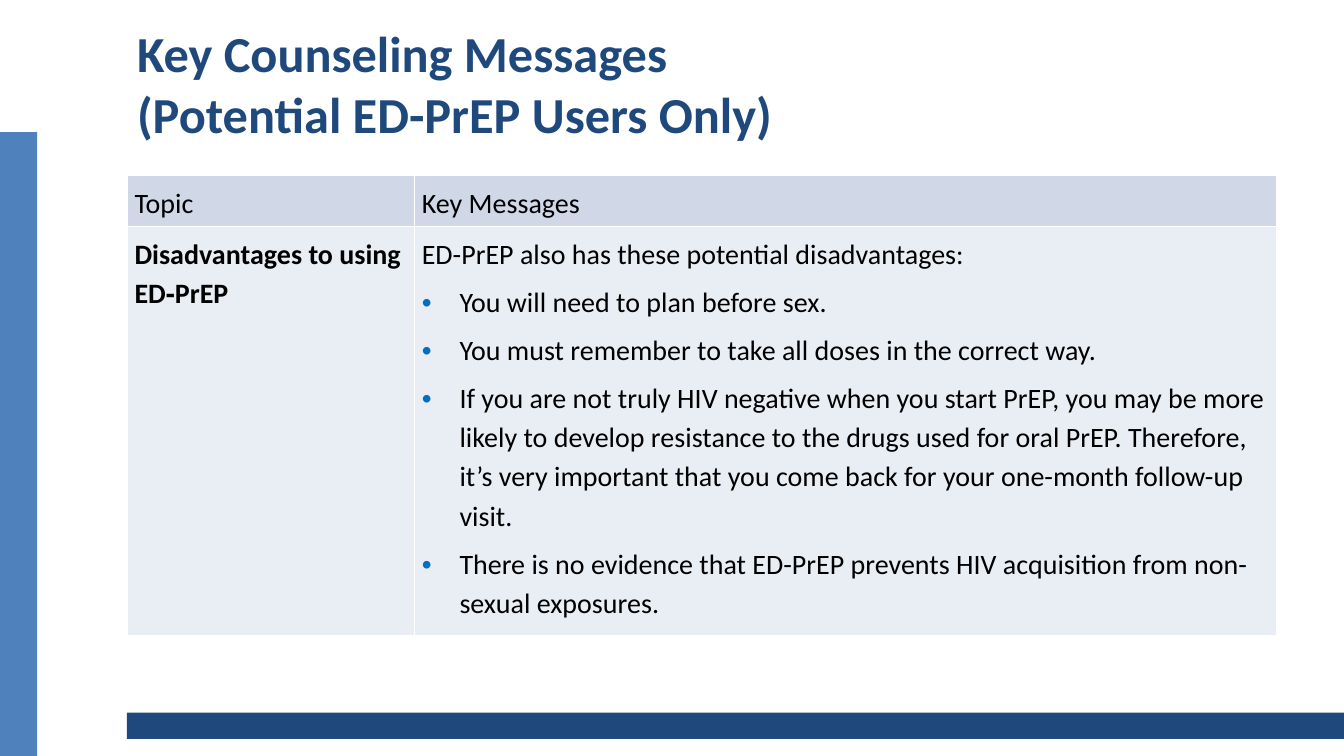
from pptx import Presentation
from pptx.dml.color import RGBColor
from pptx.enum.shapes import MSO_SHAPE as SHAPE
from pptx.enum.text import MSO_ANCHOR as ANCHOR, MSO_AUTO_SIZE as AUTO, PP_ALIGN as ALIGN
from pptx.oxml import parse_xml
from pptx.oxml.ns import nsdecls
from pptx.util import Cm, Pt


def rgb(value):
    return RGBColor.from_string(value)


def write(p, text, size=20, color="000000", bold=False, spacing=1.15, before=0, bullet=None):
    p.alignment = ALIGN.LEFT
    p.line_spacing = spacing
    p.space_before = Pt(before)
    for i, line in enumerate(text.split("\n")):
        if i:
            p.add_line_break()
        r = p.add_run()
        r.text = line
        r.font.name = "Calibri"
        r.font.size = Pt(size)
        r.font.bold = bold
        r.font.color.rgb = rgb(color)
    if bullet:
        pPr = p._p.get_or_add_pPr()
        pPr.set("marL", str(Cm(0.95)))
        pPr.set("indent", str(-Cm(0.95)))
        for xml in (f'<a:buClr {nsdecls("a")}><a:srgbClr val="{bullet}"/></a:buClr>',
                    f'<a:buFont {nsdecls("a")} typeface="Arial"/>',
                    f'<a:buChar {nsdecls("a")} char="•"/>'):
            pPr.append(parse_xml(xml))


prs = Presentation()
prs.slide_width, prs.slide_height = Cm(33.87), Cm(19.05)
s = prs.slides.add_slide(prs.slide_layouts[5])
left, width = 3.2, 28.98

bars = [(0, 3.33, 0.94, 15.72, "4F81BD"), (left, 17.96, 30.67, 0.66, "1F497D")]
for x, y, w, h, color in bars:
    sp = s.shapes.add_shape(SHAPE.RECTANGLE, Cm(x), Cm(y), Cm(w), Cm(h))
    sp.shadow.inherit = False
    sp.fill.solid()
    sp.fill.fore_color.rgb = rgb(color)
    sp.line.fill.background()

title = s.shapes.title
title.left, title.top, title.width, title.height = Cm(left), Cm(0.89), Cm(width), Cm(2.39)
tf = title.text_frame
tf.auto_size = AUTO.NONE
tf.vertical_anchor = ANCHOR.MIDDLE
write(tf.paragraphs[0], "Key Counseling Messages\n(Potential ED-PrEP Users Only)",
      size=36, color="1F497D", bold=True, spacing=1.0)

bullet = dict(before=6, bullet="0070C0")
rows = [
    ("D0D8E8", [[("Topic", {})], [("Key Messages", {})]]),
    ("E9EDF4", [
        [("Disadvantages to using ED‑PrEP", dict(bold=True))],
        [("ED-PrEP also has these potential disadvantages:", dict(before=12)),
         ("You will need to plan before sex.", bullet),
         ("You must remember to take all doses in the correct way.", bullet),
         ("If you are not truly HIV negative when you start PrEP, you may be more likely "
          "to develop resistance to the drugs used for oral PrEP. Therefore, it’s very "
          "important that you come back for your one-month follow-up visit.", bullet),
         ("There is no evidence that ED-PrEP prevents HIV acquisition from "
          "non-sexual exposures.", bullet)],
    ]),
]
table = s.shapes.add_table(2, 2, Cm(left), Cm(4.42), Cm(width), Cm(11.53)).table
for column, w in zip(table.columns, (7.24, 21.74)):
    column.width = Cm(w)
for row, h, (fill, texts) in zip(table.rows, (1.22, 10.31), rows):
    row.height = Cm(h)
    for cell, paragraphs in zip(row.cells, texts):
        cell.margin_left = cell.margin_right = Cm(0.19)
        cell.margin_top = cell.margin_bottom = Cm(0.15)
        for side in "LRTB":
            cell._tc.get_or_add_tcPr().append(parse_xml(
                f'<a:ln{side} {nsdecls("a")} w="{Pt(1)}"><a:solidFill>'
                f'<a:srgbClr val="FFFFFF"/></a:solidFill></a:ln{side}>'))
        cell.fill.solid()
        cell.fill.fore_color.rgb = rgb(fill)
        tf = cell.text_frame
        for i, (text, style) in enumerate(paragraphs):
            write(tf.add_paragraph() if i else tf.paragraphs[0], text, **style)

prs.save("out.pptx")
